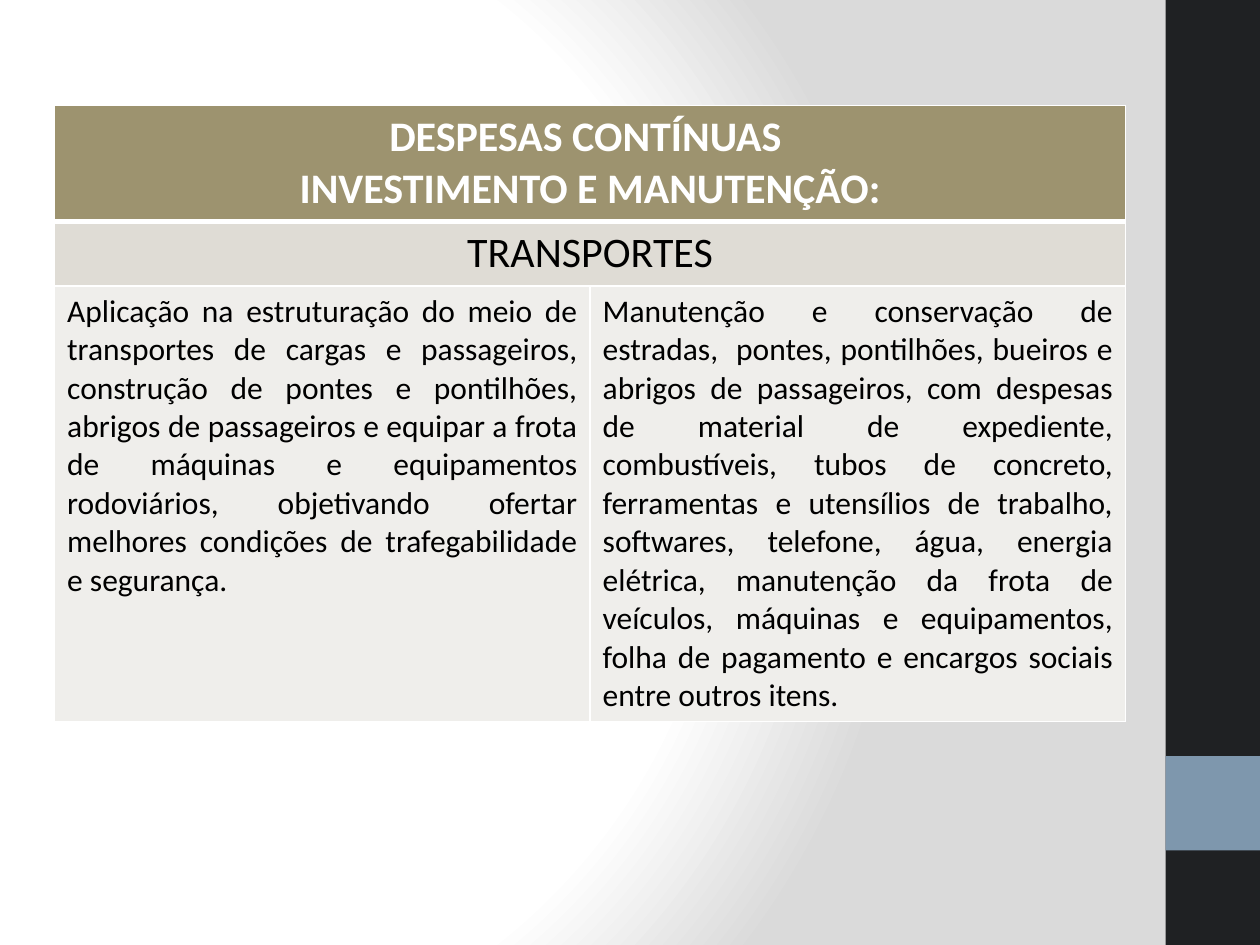
from lxml.etree import SubElement
from pptx import Presentation
from pptx.dml.color import RGBColor
from pptx.enum.shapes import MSO_SHAPE
from pptx.enum.text import PP_ALIGN
from pptx.oxml import parse_xml
from pptx.oxml.ns import nsdecls, qn
from pptx.util import Pt


def paint(fill, color):
    fill.solid()
    fill.fore_color.rgb = RGBColor.from_string(color)


def edge(cell, sides):
    props = cell._tc.get_or_add_tcPr()
    for spot, (side, width) in enumerate(sides.items()):
        line = SubElement(props, qn("a:ln" + side), w=str(Pt(width)))
        fill = SubElement(line, qn("a:solidFill"))
        SubElement(fill, qn("a:srgbClr"), val="FFFFFF")
        props.insert(spot, line)


deck = Presentation()
deck.slide_width, deck.slide_height = Pt(720), Pt(540)
slide = deck.slides.add_slide(deck.slide_layouts[6])

paint(slide.background.fill, "FFFFFF")
back = slide.element.find(".//" + qn("p:bgPr"))
stops = "".join(
    f'<a:gs pos="{at * 1000}"><a:srgbClr val="{color}"/></a:gs>'
    for at, color in [(0, "FFFFFF"), (75, "FFFFFF"), (100, "DADADA")]
)
back.replace(back[0], parse_xml(
    f'<a:gradFill {nsdecls("a")} rotWithShape="1"><a:gsLst>{stops}</a:gsLst>'
    '<a:path path="circle"><a:fillToRect l="20000" t="50000" r="100000" b="50000"/>'
    '</a:path></a:gradFill>'
))

for top, height, color in [(0, 540, "1F2123"), (432, 54, "7E97AD")]:
    band = slide.shapes.add_shape(
        MSO_SHAPE.RECTANGLE, Pt(666), Pt(top), Pt(54), Pt(height))
    band.shadow.inherit = False
    band.line.fill.background()
    paint(band.fill, color)

rows = [
    (66.24, "9D936F", "FFFFFF", 24, True, PP_ALIGN.CENTER,
     [["DESPESAS CONTÍNUAS ", "INVESTIMENTO E MANUTENÇÃO:"]]),
    (36.72, "DFDCD5", "000000", 24, False, PP_ALIGN.CENTER, [["TRANSPORTES"]]),
    (208.8, "EFEEEB", "000000", 18, False, PP_ALIGN.JUSTIFY, [
        ["Aplicação na estruturação do meio de transportes de cargas e passageiros, "
         "construção de pontes e pontilhões, abrigos de passageiros e equipar a frota "
         "de máquinas e equipamentos rodoviários, objetivando ofertar melhores "
         "condições de trafegabilidade e segurança."],
        ["Manutenção e conservação de estradas,  pontes, pontilhões, bueiros e "
         "abrigos de passageiros, com despesas de material de expediente, "
         "combustíveis, tubos de concreto, ferramentas e utensílios de trabalho, "
         "softwares, telefone, água, energia elétrica, manutenção da frota de "
         "veículos, máquinas e equipamentos, folha de pagamento e encargos sociais "
         "entre outros itens."],
    ]),
]
table = slide.shapes.add_table(
    len(rows), 2, Pt(31.2), Pt(60.4), Pt(612), Pt(311.76)).table

for i, (height, color, ink, size, bold, align, texts) in enumerate(rows):
    table.rows[i].height = Pt(height)
    for cell in table.rows[i].cells:
        paint(cell.fill, color)
        edge(cell, {"L": 1, "R": 1, "T": 3 if i == 1 else 1, "B": 3 if i == 0 else 1})
    if len(texts) == 1:
        table.cell(i, 0).merge(table.cell(i, 1))
    for j, lines in enumerate(texts):
        frame = table.cell(i, j).text_frame
        for k, text in enumerate(lines):
            para = frame.add_paragraph() if k else frame.paragraphs[0]
            para.alignment = align
            run = para.add_run()
            run.text = text
            font = run.font
            font.name, font.size, font.bold = "Calibri", Pt(size), bold
            font.color.rgb = RGBColor.from_string(ink)

deck.save("out.pptx")
